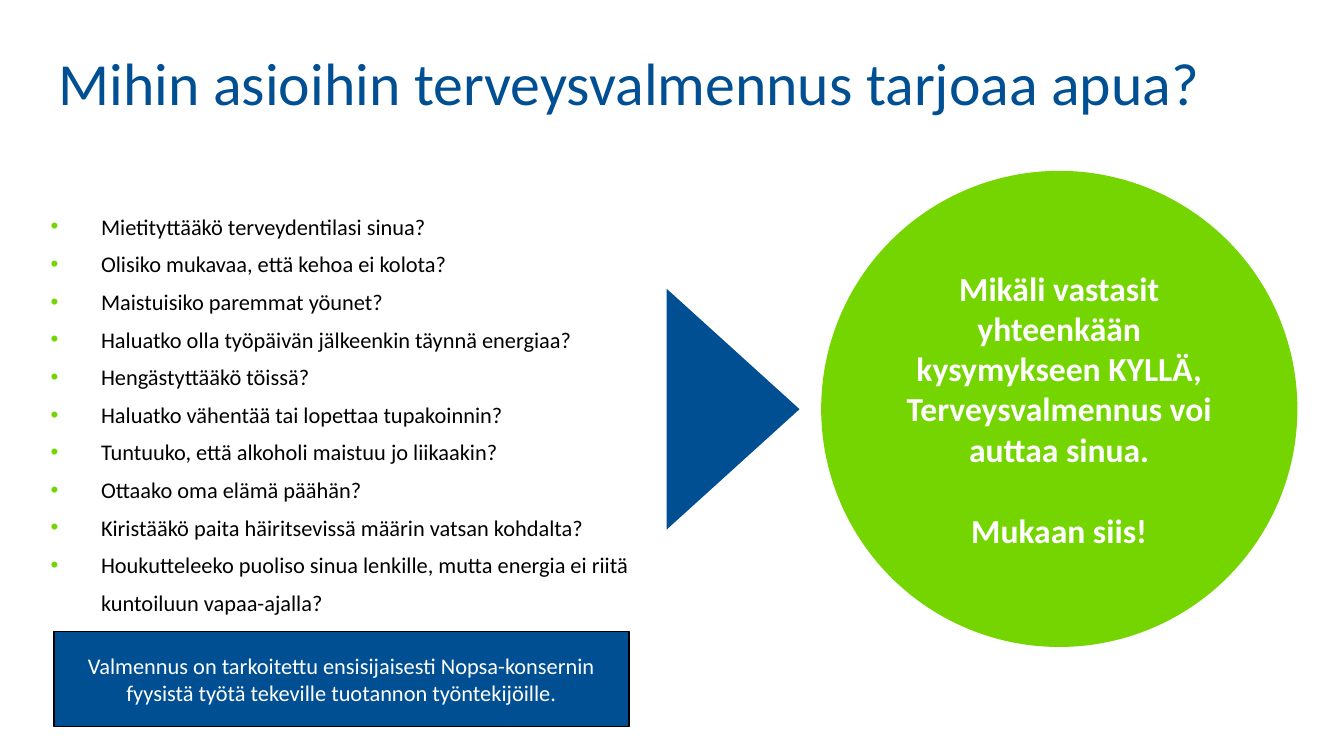
from pptx import Presentation
from pptx.dml.color import RGBColor
from pptx.enum.shapes import MSO_SHAPE as Kind
from pptx.enum.text import MSO_ANCHOR as Anchor, PP_ALIGN as Align
from pptx.oxml.ns import qn
from pptx.util import Cm, Pt
from lxml.etree import SubElement as Sub

BLUE, GREEN, WHITE, BLACK = "004F92", "75D500", "FFFFFF", "000000"
ASKS = [
    "Mietityttääkö terveydentilasi sinua?",
    "Olisiko mukavaa, että kehoa ei kolota?",
    "Maistuisiko paremmat yöunet?",
    "Haluatko olla työpäivän jälkeenkin täynnä energiaa?",
    "Hengästyttääkö töissä?",
    "Haluatko vähentää tai lopettaa tupakoinnin?",
    "Tuntuuko, että alkoholi maistuu jo liikaakin?",
    "Ottaako oma elämä päähän?",
    "Kiristääkö paita häiritsevissä määrin vatsan kohdalta?",
    "Houkutteleeko puoliso sinua lenkille, mutta energia ei riitä kuntoiluun vapaa-ajalla?",
]
CALL = [
    "Mikäli vastasit yhteenkään kysymykseen KYLLÄ, Terveysvalmennus voi auttaa sinua.",
    "Mukaan siis!",
]
NOTE = ("Valmennus on tarkoitettu ensisijaisesti Nopsa-konsernin "
        "fyysistä työtä tekeville tuotannon työntekijöille.")


def color(code):
    """Turn a hex string into a colour."""
    return RGBColor.from_string(code)


def bullet(para, code):
    """Give a paragraph a coloured bullet with a hanging indent."""
    props = para._p.get_or_add_pPr()
    props.set("marL", str(Cm(0.95)))
    props.set("indent", str(-Cm(0.95)))
    Sub(Sub(props, qn("a:buClr")), qn("a:srgbClr")).set("val", code)
    Sub(props, qn("a:buFont")).set("typeface", "Arial")
    Sub(props, qn("a:buChar")).set("char", "•")


def write(shape, *lines, size=12, ink=BLACK, bold=False, align=Align.LEFT,
          anchor=Anchor.MIDDLE, pitch=None, gap=0, dot=None):
    """Fill a shape with formatted paragraphs."""
    frame = shape.text_frame
    frame.word_wrap = True
    frame.vertical_anchor = anchor
    for i, line in enumerate(lines):
        para = frame.add_paragraph() if i else frame.paragraphs[0]
        para.alignment = align
        if pitch:
            para.line_spacing = pitch
        if i and gap:
            para.space_before = Pt(gap)
        if dot:
            bullet(para, dot)
        run = para.add_run()
        run.text = line
        font = run.font
        font.name, font.size, font.bold = "Calibri", Pt(size), bold
        font.color.rgb = color(ink)


def label(slide, box, *lines, **form):
    """Add a text box."""
    write(slide.shapes.add_textbox(*map(Cm, box)), *lines, **form)


def block(slide, kind, box, fill, line=None, turn=0):
    """Add a filled shape with an optional outline."""
    shape = slide.shapes.add_shape(kind, *map(Cm, box))
    shape.shadow.inherit = False
    shape.rotation = turn
    shape.fill.solid()
    shape.fill.fore_color.rgb = color(fill)
    if line:
        shape.line.color.rgb = color(line)
        shape.line.width = Pt(0.75)
    else:
        shape.line.fill.background()
    return shape


def main():
    """Build and save the slide."""
    deck = Presentation()
    deck.slide_width, deck.slide_height = Cm(25.4), Cm(14.29)
    slide = deck.slides.add_slide(deck.slide_layouts[6])
    label(slide, (0.86, 0.74, 23.67, 1.6),
          "Mihin asioihin terveysvalmennus tarjoaa apua?",
          size=32, ink=BLUE, anchor=Anchor.TOP)
    label(slide, (0.71, 3.12, 11.46, 9.22), *ASKS, pitch=1.4, dot=GREEN)
    block(slide, Kind.ISOSCELES_TRIANGLE, (11.58, 6.48, 4.55, 2.51), BLUE, turn=90)
    disc = block(slide, Kind.OVAL, (15.52, 3.23, 9, 9), GREEN)
    write(disc, *CALL, size=18, ink=WHITE, bold=True, align=Align.CENTER, gap=22)
    note = block(slide, Kind.RECTANGLE, (1.02, 11.94, 10.87, 1.8), BLUE, line=BLACK)
    write(note, NOTE, ink=WHITE, align=Align.CENTER)
    deck.save("out.pptx")


if __name__ == "__main__":
    main()
